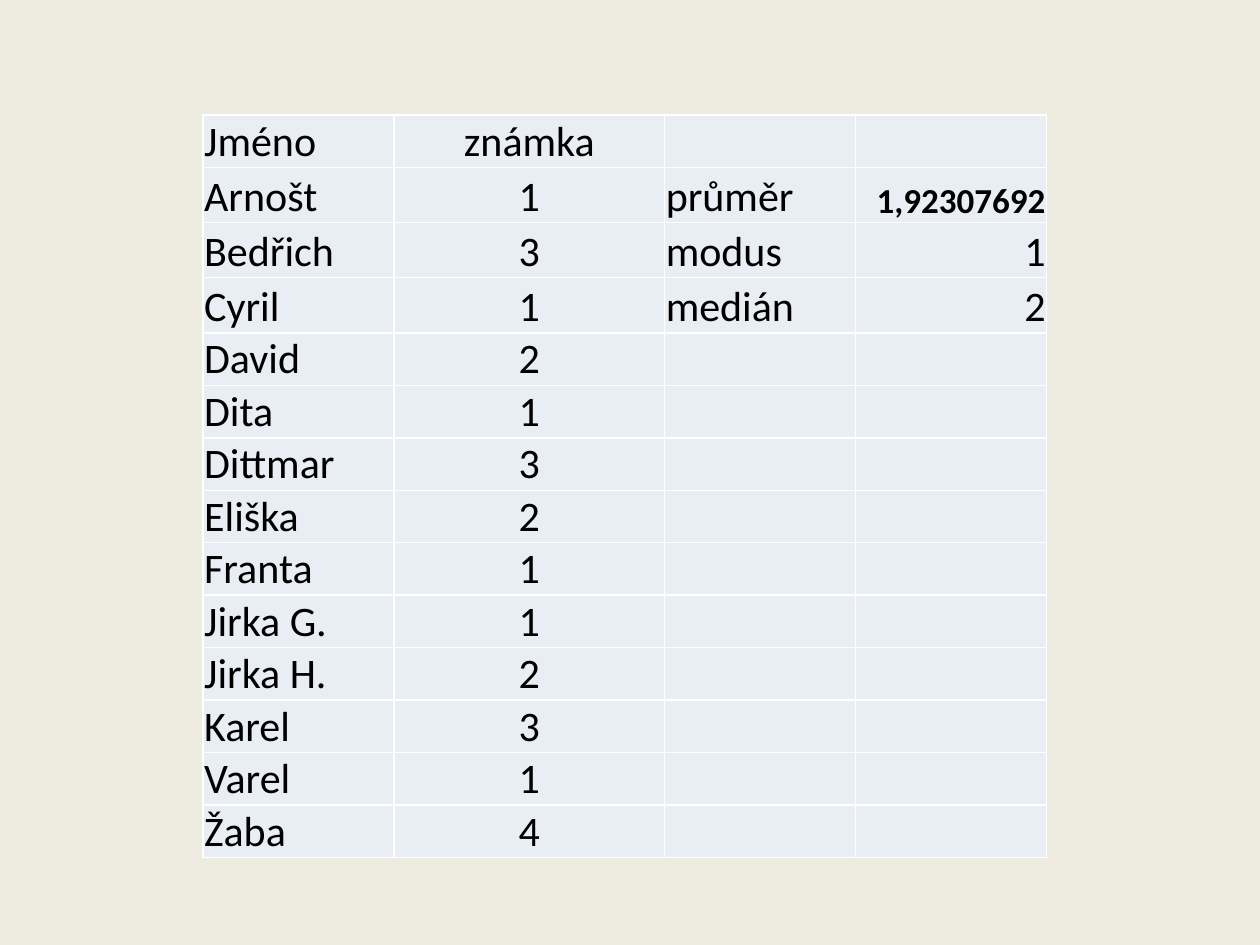
from lxml.etree import SubElement
from pptx import Presentation
from pptx.dml.color import RGBColor
from pptx.enum.text import MSO_ANCHOR, PP_ALIGN
from pptx.oxml.ns import qn
from pptx.util import Pt

COLORS = {"back": "EEECE1", "cell": "E9EDF4", "rule": "FFFFFF", "text": "000000"}
ALIGNS = [PP_ALIGN.LEFT, PP_ALIGN.CENTER, PP_ALIGN.LEFT, PP_ALIGN.RIGHT]
WIDTHS = [109.2, 154.6, 109.2, 109.2]
LOW, HIGH = 29.7, 31.5

GRADES = [
    ("Jméno", "známka"),
    ("Arnošt", "1"),
    ("Bedřich", "3"),
    ("Cyril", "1"),
    ("David", "2"),
    ("Dita", "1"),
    ("Dittmar", "3"),
    ("Eliška", "2"),
    ("Franta", "1"),
    ("Jirka G.", "1"),
    ("Jirka H.", "2"),
    ("Karel", "3"),
    ("Varel", "1"),
    ("Žaba", "4"),
]
STATS = {1: ("průměr", "1,92307692"), 2: ("modus", "1"), 3: ("medián", "2")}
MEAN = (1, 3)


def color(name):
    return RGBColor.from_string(COLORS[name])


class Page:
    def __init__(self, deck, font="Calibri", size=24):
        self.font, self.size = font, size
        self.slide = deck.slides.add_slide(deck.slide_layouts[6])
        fill = self.slide.background.fill
        fill.solid()
        fill.fore_color.rgb = color("back")

    def table(self, left, top, widths, heights):
        frame = self.slide.shapes.add_table(
            len(heights), len(widths), Pt(left), Pt(top),
            Pt(sum(widths)), Pt(sum(heights)))
        table = frame.table
        table.first_row = table.horz_banding = False
        for column, width in zip(table.columns, widths):
            column.width = Pt(width)
        for row, height in zip(table.rows, heights):
            row.height = Pt(height)
        return table

    def border(self, cell):
        props = cell._tc.get_or_add_tcPr()
        for side in ("lnL", "lnR", "lnT", "lnB"):
            line = SubElement(props, qn(f"a:{side}"), w=str(Pt(1)))
            fill = SubElement(line, qn("a:solidFill"))
            SubElement(fill, qn("a:srgbClr"), val=COLORS["rule"])

    def cell(self, cell, text, align, size=None, bold=False):
        self.border(cell)
        cell.fill.solid()
        cell.fill.fore_color.rgb = color("cell")
        if not text:
            return
        cell.vertical_anchor = MSO_ANCHOR.BOTTOM
        cell.margin_left = cell.margin_right = cell.margin_top = Pt(0.7)
        cell.margin_bottom = Pt(0)
        cell.text = text
        line = cell.text_frame.paragraphs[0]
        line.alignment = align
        font = line.font
        font.name, font.size, font.bold = self.font, Pt(size or self.size), bold
        font.color.rgb = color("text")


def main():
    deck = Presentation()
    deck.slide_width, deck.slide_height = Pt(720), Pt(540)
    page = Page(deck)
    heights = [HIGH if row in STATS else LOW for row in range(len(GRADES))]
    table = page.table(116, 65.7, WIDTHS, heights)
    for row, grade in enumerate(GRADES):
        texts = grade + STATS.get(row, ("", ""))
        for col, (text, align) in enumerate(zip(texts, ALIGNS)):
            mean = (row, col) == MEAN
            page.cell(table.cell(row, col), text, align, 20 if mean else None, mean)
    deck.save("out.pptx")


if __name__ == "__main__":
    main()
